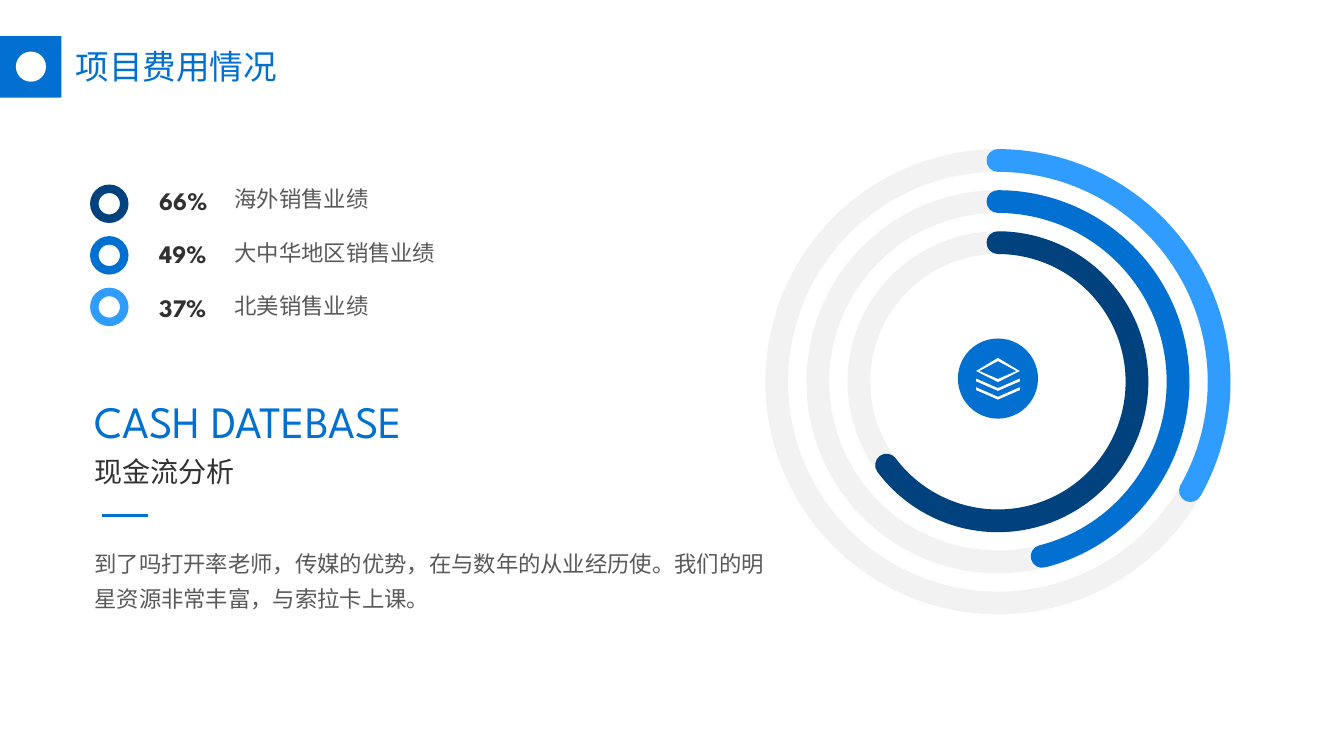
from dataclasses import dataclass

from lxml import etree
from pptx import Presentation
from pptx.dml.color import RGBColor
from pptx.enum.shapes import MSO_CONNECTOR, MSO_SHAPE
from pptx.enum.text import MSO_ANCHOR, MSO_AUTO_SIZE, PP_ALIGN
from pptx.oxml.ns import qn
from pptx.util import Cm, Pt

RECTANGLE, OVAL = MSO_SHAPE.RECTANGLE, MSO_SHAPE.OVAL
DONUT, ARC = MSO_SHAPE.DONUT, MSO_SHAPE.ARC
STRAIGHT = MSO_CONNECTOR.STRAIGHT
TOP, MIDDLE = MSO_ANCHOR.TOP, MSO_ANCHOR.MIDDLE
NO_AUTOFIT = MSO_AUTO_SIZE.NONE
LEFT = PP_ALIGN.LEFT
TITLE_ONLY = 5


@dataclass(frozen=True)
class Theme:
    navy: str = "00427E"
    blue: str = "0170D1"
    sky: str = "309CFE"
    track: str = "F2F2F2"
    white: str = "FFFFFF"
    dark: str = "313131"
    grey: str = "595959"
    latin: str = "League Spartan"
    chinese: str = "Noto Sans CJK SC"
    heading_size: float = 32
    title_size: float = 24
    subtitle_size: float = 20
    percent_size: float = 18
    body_size: float = 16
    ring_width: float = 16.25
    rule_width: float = 2.25


THEME = Theme()

# share, name, colour, angle in degrees where the arc ends (clockwise from 3 o'clock)
REGIONS = (
    ("66%", "海外销售业绩", THEME.navy, 143.2),
    ("49%", "大中华地区销售业绩", THEME.blue, 75.8),
    ("37%", "北美销售业绩", THEME.sky, 29.5),
)
RING_CENTRE = (25.15, 9.62)
INNER_RING, RING_STEP = 7.01, 2.07
HUB_CENTRE = (25.15, 9.54)

# Outlines of the stacked-layers icon, in hundredths of a centimetre from the hub centre
TOP_LAYER = ((-55, -19), (0, -52), (55, -19), (0, 9))
TOP_HOLE = ((-47, -19), (0, -44), (47, -19), (0, 1))
LOWER_LAYER = ((-55, 0), (0, 24), (55, 0), (55, 7), (0, 31), (-55, 7))
LAYER_GAP = 22


def rgb(colour):
    return RGBColor.from_string(colour)


def place(shape, left, top, width, height):
    shape.left, shape.top = Cm(left), Cm(top)
    shape.width, shape.height = Cm(width), Cm(height)


def set_text(shape, text, size, colour, font=THEME.chinese, bold=False,
             spacing=None, anchor=TOP):
    frame = shape.text_frame
    frame.text = text
    frame.word_wrap = True
    frame.auto_size = NO_AUTOFIT
    frame.vertical_anchor = anchor
    paragraph = frame.paragraphs[0]
    paragraph.alignment = LEFT
    paragraph.line_spacing = spacing
    paragraph.font.size = Pt(size)
    paragraph.font.bold = bold
    paragraph.font.color.rgb = rgb(colour)
    paragraph.font.name = font
    properties = paragraph._p.pPr.find(qn("a:defRPr"))
    etree.SubElement(properties, qn("a:ea"), typeface=THEME.chinese)


def add_text(slide, box, text, size, colour, **style):
    set_text(slide.shapes.add_textbox(*map(Cm, box)), text, size, colour, **style)


def fill_plain(shape, colour):
    shape.shadow.inherit = False
    shape.fill.solid()
    shape.fill.fore_color.rgb = rgb(colour)
    shape.line.fill.background()


def add_filled(slide, kind, box, colour):
    shape = slide.shapes.add_shape(kind, *map(Cm, box))
    fill_plain(shape, colour)
    return shape


def square_around(centre, size):
    x, y = centre
    return x - size / 2, y - size / 2, size, size


def add_ring(slide, kind, diameter, colour):
    """Add an unfilled circle or arc with the thick ring stroke."""
    box = square_around(RING_CENTRE, diameter)
    ring = slide.shapes.add_shape(kind, *map(Cm, box))
    ring.shadow.inherit = False
    ring.fill.background()
    ring.line.color.rgb = rgb(colour)
    ring.line.width = Pt(THEME.ring_width)
    return ring


def add_progress(slide, diameter, colour, end_angle):
    arc = add_ring(slide, ARC, diameter, colour)
    for index, degrees in enumerate((270, end_angle)):
        arc.adjustments[index] = degrees * 60000 / 100000
    arc._element.spPr.find(qn("a:ln")).set("cap", "rnd")


def add_layers_icon(slide):
    second_layer = [(x, y + LAYER_GAP) for x, y in LOWER_LAYER]
    builder = slide.shapes.build_freeform(*TOP_LAYER[0], scale=Cm(0.01))
    builder.add_line_segments(TOP_LAYER[1:])
    for outline in (TOP_HOLE, LOWER_LAYER, second_layer):
        builder.move_to(*outline[0])
        builder.add_line_segments(outline[1:])
    fill_plain(builder.convert_to_shape(*map(Cm, HUB_CENTRE)), THEME.white)


def add_rule(slide, left, right, y):
    rule = slide.shapes.add_connector(STRAIGHT, Cm(left), Cm(y), Cm(right), Cm(y))
    rule.line.color.rgb = rgb(THEME.blue)
    rule.line.width = Pt(THEME.rule_width)
    etree.SubElement(rule._element.spPr, qn("a:effectLst"))


def add_header(slide):
    title = slide.shapes.title
    place(title, 1.65, 1.04, 6.58, 1.27)
    set_text(title, "项目费用情况", THEME.title_size, THEME.blue, anchor=MIDDLE)
    add_filled(slide, RECTANGLE, (0, 0.91, 1.55, 1.55), THEME.blue)
    add_filled(slide, OVAL, square_around((0.78, 1.68), 0.76), THEME.white)


def add_legend(slide):
    for row, (share, name, colour, _) in enumerate(REGIONS):
        marker = add_filled(slide, DONUT, (2.27, 4.65 + 1.3 * row, 0.97, 0.97), colour)
        marker.adjustments[0] = 0.222
        text_top = 4.55 + 1.34 * row
        add_text(slide, (3.76, text_top, 1.85, 1.02), share, THEME.percent_size,
                 THEME.dark, font=THEME.latin, bold=True)
        add_text(slide, (5.66, text_top, 5.9, 0.94), name, THEME.body_size,
                 THEME.grey, font=THEME.latin)


def add_analysis(slide):
    add_text(slide, (2.13, 9.8, 10.46, 1.63), "CASH DATEBASE", THEME.heading_size,
             THEME.blue, font=THEME.latin)
    add_text(slide, (2.13, 11.33, 4.27, 1.12), "现金流分析", THEME.subtitle_size,
             THEME.dark)
    add_rule(slide, 2.57, 3.73, 12.98)
    add_text(slide, (2.13, 13.54, 17.45, 2.03),
             "到了吗打开率老师，传媒的优势，在与数年的从业经历使。"
             "我们的明星资源非常丰富，与索拉卡上课。",
             THEME.body_size, THEME.grey, spacing=1.3)


def add_ring_diagram(slide):
    diameters = [INNER_RING + RING_STEP * i for i in range(len(REGIONS))]
    for diameter in diameters:
        add_ring(slide, OVAL, diameter, THEME.track)
    for diameter, (_, _, colour, end_angle) in zip(diameters, REGIONS):
        add_progress(slide, diameter, colour, end_angle)
    add_filled(slide, OVAL, square_around(HUB_CENTRE, 2.02), THEME.blue)
    add_layers_icon(slide)


def main():
    presentation = Presentation()
    presentation.slide_width, presentation.slide_height = Cm(33.87), Cm(19.05)
    slide = presentation.slides.add_slide(presentation.slide_layouts[TITLE_ONLY])
    add_header(slide)
    add_legend(slide)
    add_analysis(slide)
    add_ring_diagram(slide)
    presentation.save("out.pptx")


if __name__ == "__main__":
    main()
